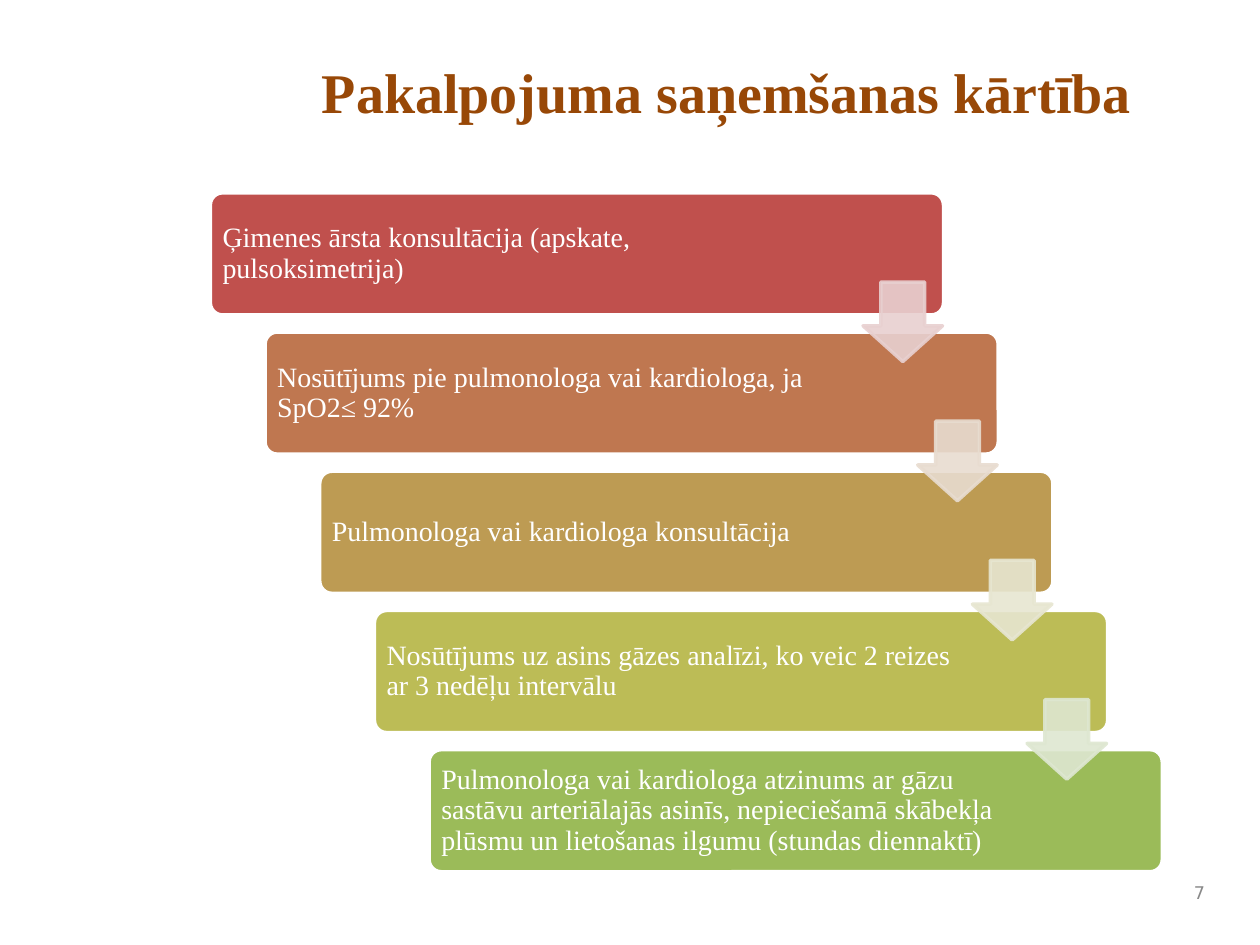
from dataclasses import dataclass

from lxml import etree
from pptx import Presentation
from pptx.dml.color import RGBColor
from pptx.enum import shapes, text
from pptx.oxml import ns
from pptx.util import Pt


@dataclass(frozen=True)
class Theme:
    heading: str = "984807"
    white: str = "FFFFFF"
    muted: str = "898989"
    serif: str = "Times New Roman"
    sans: str = "DejaVu Sans"
    title_size: int = 32
    step_size: int = 16
    number_size: int = 10
    outline: int = 2
    arrow_opacity: int = 90


THEME = Theme()

STEPS = [
    ("Ģimenes ārsta konsultācija (apskate, pulsoksimetrija)", "C0504D", "E8D0D0"),
    ("Nosūtījums pie pulmonologa vai kardiologa, ja SpO2≤ 92%", "BF7750", "E8DCD0"),
    ("Pulmonologa vai kardiologa konsultācija", "BD9B53", "E7E6D1"),
    ("Nosūtījums uz asins gāzes analīzi, ko veic 2 reizes ar 3 nedēļu intervālu",
     "BCBC56", "DEE7D1"),
    ("Pulmonologa vai kardiologa atzinums ar gāzu sastāvu arteriālajās asinīs, "
     "nepieciešamā skābekļa plūsmu un lietošanas ilgumu (stundas diennaktī)",
     "9BBB59", None),
]


def add_label(slide, box, wording, size, color, font=THEME.serif, bold=False,
              align=text.PP_ALIGN.LEFT, anchor=text.MSO_ANCHOR.MIDDLE,
              insets=(7.2, 3.6), spacing=None):
    frame = slide.shapes.add_textbox(*map(Pt, box)).text_frame
    frame.word_wrap = True
    frame.vertical_anchor = anchor
    frame.margin_left = frame.margin_right = Pt(insets[0])
    frame.margin_top = frame.margin_bottom = Pt(insets[1])
    paragraph = frame.paragraphs[0]
    paragraph.alignment = align
    paragraph.line_spacing = spacing
    run = paragraph.add_run()
    run.text = wording
    run.font.name = font
    run.font.size = Pt(size)
    run.font.bold = bold
    run.font.color.rgb = RGBColor.from_string(color)


def add_block(slide, preset, box, adjustments, fill, line):
    block = slide.shapes.add_shape(preset, *map(Pt, box))
    block.shadow.inherit = False
    for index, value in enumerate(adjustments):
        block.adjustments[index] = value
    block.fill.solid()
    block.fill.fore_color.rgb = RGBColor.from_string(fill)
    block.line.color.rgb = RGBColor.from_string(line)
    block.line.width = Pt(THEME.outline)
    return block


def add_title(slide, box):
    add_label(slide, box, "Pakalpojuma saņemšanas kārtība", THEME.title_size,
              THEME.heading, bold=True, align=text.PP_ALIGN.CENTER,
              anchor=text.MSO_ANCHOR.TOP)


def add_step(slide, box, wording, fill):
    left, top, width, height = box
    add_block(slide, shapes.MSO_SHAPE.ROUNDED_RECTANGLE, box, [0.1], fill, THEME.white)
    add_label(slide, (left + 2, top + 2, width - 80.6, height - 4), wording,
              THEME.step_size, THEME.white, insets=(5, 5), spacing=0.9)


def add_step_arrow(slide, box, color):
    arrow = add_block(slide, shapes.MSO_SHAPE.DOWN_ARROW, box, [0.55, 0.45], color, color)
    for paint in arrow.element.spPr.iter(ns.qn("a:srgbClr")):
        alpha = etree.SubElement(paint, ns.qn("a:alpha"))
        alpha.set("val", str(THEME.arrow_opacity * 1000))


def add_staircase(slide, box):
    left, top, width, height = box
    step_width, step_height, arrow_size = 419, 69.8, 45.4
    shift = (width - step_width) / (len(STEPS) - 1)
    drop = (height - step_height) / (len(STEPS) - 1)
    corners = [(left + shift * i, top + drop * i) for i in range(len(STEPS))]
    for (x, y), (wording, fill, _) in zip(corners, STEPS):
        add_step(slide, (x, y, step_width, step_height), wording, fill)
    for (x, y), (_, _, tint) in zip(corners, STEPS):
        if tint:
            add_step_arrow(slide, (x + 373, y + 51, arrow_size, arrow_size), tint)


def add_page_number(slide, box):
    add_label(slide, box, "7", THEME.number_size, THEME.muted, font=THEME.sans,
              align=text.PP_ALIGN.RIGHT)


def main():
    deck = Presentation()
    deck.slide_width, deck.slide_height = Pt(720), Pt(540)
    slide = deck.slides.add_slide(deck.slide_layouts[6])
    add_page_number(slide, (671.8, 498.2, 23.8, 23.8))
    add_title(slide, (148.3, 29.5, 534.2, 71.3))
    add_staircase(slide, (120.2, 110.2, 544, 388))
    deck.save("out.pptx")


if __name__ == "__main__":
    main()
